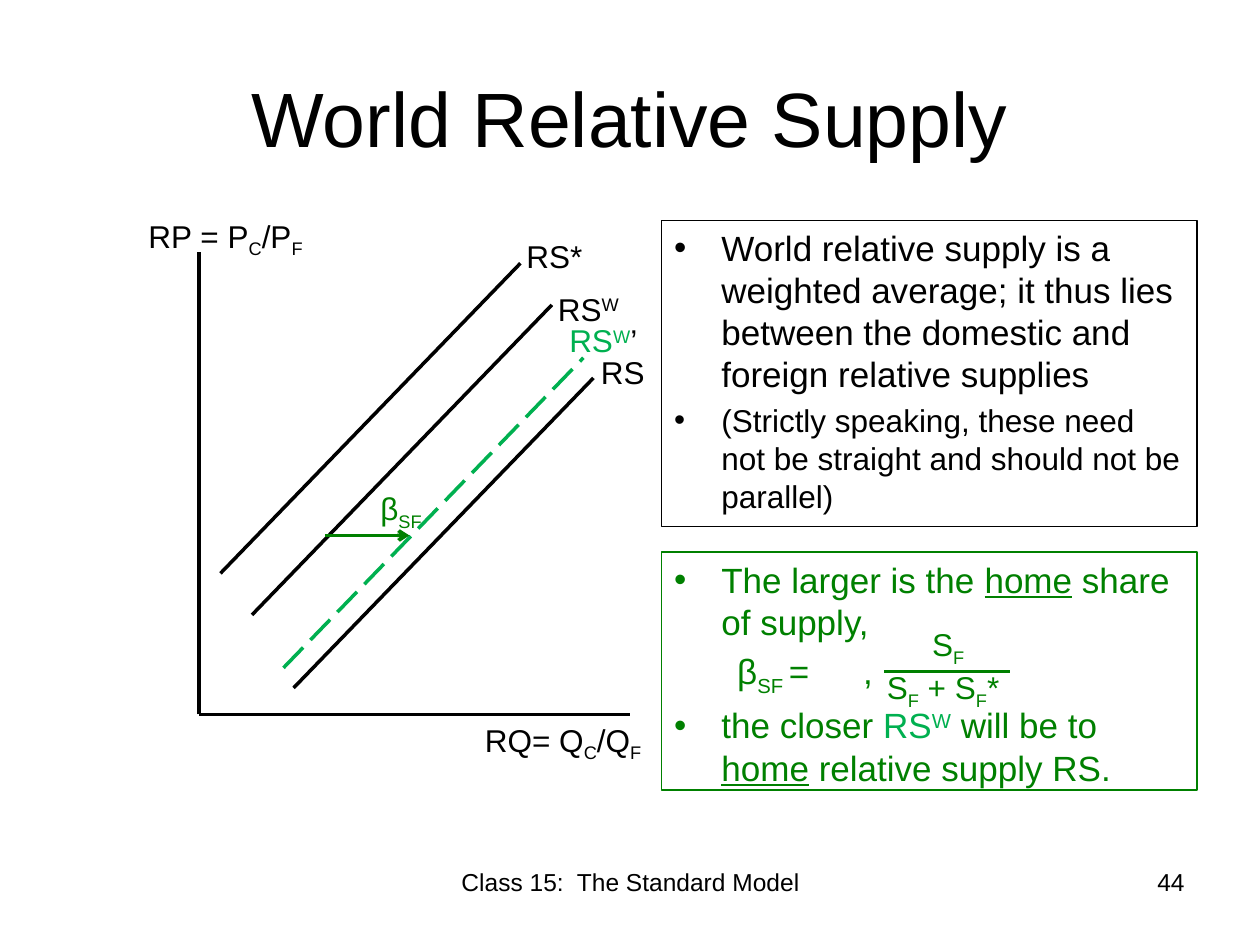
from dataclasses import dataclass
from typing import Optional

from lxml import etree
from pptx import Presentation, util as u
from pptx.dml.color import RGBColor
from pptx.enum import dml, shapes, text
from pptx.oxml import ns

BLACK, GREEN, BRIGHT = "000000", "008000", "00B050"
SUB, SUP = -25, 30
LEFT, CENTER, RIGHT = text.PP_ALIGN.LEFT, text.PP_ALIGN.CENTER, text.PP_ALIGN.RIGHT


@dataclass
class Run:
    text: str
    base: int = 0
    color: Optional[str] = None
    underline: bool = False


@dataclass
class Label:
    box: tuple
    runs: list
    color: str = BLACK
    size: int = 18
    align: text.PP_ALIGN = LEFT
    wrap: bool = True


@dataclass
class Line:
    start: tuple
    end: tuple
    color: str = BLACK
    dash: bool = False
    arrow: bool = False


@dataclass
class Item:
    runs: list
    size: int = 20
    tabs: tuple = ()


def rgb(color: str) -> RGBColor:
    return RGBColor.from_string(color)


def place(sp, box: tuple) -> None:
    sp.left, sp.top, sp.width, sp.height = (u.Inches(v) for v in box)


def fill_paragraph(p, runs: list, color: str, size: int) -> None:
    p.font.name = "Arial"
    p.font.size = u.Pt(size)
    p.font.color.rgb = rgb(color)
    for run in runs:
        r = p.add_run()
        r.text = run.text
        if run.color:
            r.font.color.rgb = rgb(run.color)
        if run.underline:
            r.font.underline = True
        if run.base:
            r._r.get_or_add_rPr().set("baseline", str(run.base * 1000))


def add_label(s, label: Label) -> None:
    sp = s.shapes.add_textbox(*(u.Inches(v) for v in label.box))
    tf = sp.text_frame
    tf.word_wrap = label.wrap
    p = tf.paragraphs[0]
    p.alignment = label.align
    fill_paragraph(p, label.runs, label.color, label.size)


def add_line(s, line: Line) -> None:
    c = s.shapes.add_connector(shapes.MSO_CONNECTOR.STRAIGHT,
                               *(u.Inches(v) for v in line.start + line.end))
    c.line.color.rgb = rgb(line.color)
    c.line.width = u.Pt(2)
    if line.dash:
        c.line.dash_style = dml.MSO_LINE.LONG_DASH
    if line.arrow:
        etree.SubElement(c.line._get_or_add_ln(), ns.qn("a:tailEnd"), type="arrow")
    etree.SubElement(c._element.spPr, ns.qn("a:effectLst"))


def set_tabs(p, tabs: tuple) -> None:
    pPr = p._p.get_or_add_pPr()
    pPr.set("marL", "0")
    pPr.set("indent", "0")
    none = etree.Element(ns.qn("a:buNone"))
    stops = etree.Element(ns.qn("a:tabLst"))
    for tab in tabs:
        etree.SubElement(stops, ns.qn("a:tab"), pos=str(u.Inches(tab)), algn="l")
    pPr.insert(0, none)
    pPr.insert(1, stops)


def fill_list(sp, box: tuple, items: list, color: str) -> None:
    place(sp, box)
    sp.line.color.rgb = rgb(color)
    sp.line.width = u.Pt(0.75)
    tf = sp.text_frame
    tf.auto_size = text.MSO_AUTO_SIZE.NONE
    for i, item in enumerate(items):
        p = tf.add_paragraph() if i else tf.paragraphs[0]
        fill_paragraph(p, item.runs, color, item.size)
        if item.tabs:
            set_tabs(p, item.tabs)


def curve(left: float, bottom: float, color: str = BLACK, dash: bool = False) -> Line:
    return Line((left, bottom), (left + 2.38, bottom - 2.46), color, dash)


ORIGIN = (1.58, 5.67)
LINES = [
    Line(ORIGIN, (5, 5.67)),
    Line(ORIGIN, (1.58, 2)),
    curve(1.75, 4.55),
    curve(2, 4.88),
    curve(2.33, 5.46),
    curve(2.25, 5.3, BRIGHT, True),
    Line((2.58, 4.25), (3.25, 4.25), GREEN, arrow=True),
    Line((7.02, 5.33), (8.02, 5.33), GREEN),
]
LABELS = [
    Label((1.08, 1.67, 1.51, 0.4), [Run("RP = P"), Run("C", SUB), Run("/P"), Run("F", SUB)]),
    Label((3.75, 5.67, 1.5, 0.4), [Run("RQ= Q"), Run("C", SUB), Run("/Q"), Run("F", SUB)]),
    Label((4.08, 1.83, 0.65, 0.4), [Run("RS*")], wrap=False),
    Label((4.33, 2.25, 0.71, 0.4), [Run("RS"), Run("W", SUP)], wrap=False),
    Label((4.42, 2.5, 0.77, 0.4), [Run("RS"), Run("W", SUP), Run("’", color=BLACK)],
          BRIGHT, wrap=False),
    Label((4.67, 2.75, 0.55, 0.4), [Run("RS")], wrap=False),
    Label((2.92, 3.83, 0.58, 0.4), [Run("β"), Run("SF", SUB)], GREEN),
    Label((6.94, 4.91, 1.17, 0.4), [Run("S"), Run("F", SUB)], GREEN, align=CENTER),
    Label((6.94, 5.25, 1.13, 0.4),
          [Run("S"), Run("F", SUB), Run(" + S"), Run("F", SUB), Run("*")], GREEN, wrap=False),
    Label((3.42, 6.83, 3.17, 0.52), [Run("Class 15:  The Standard Model")],
          size=14, align=CENTER),
    Label((7.17, 6.83, 2.33, 0.52), [Run("44")], size=14, align=RIGHT),
]
AVERAGE = [
    Item([Run("World relative supply is a weighted average; it thus lies between "
              "the domestic and foreign relative supplies")]),
    Item([Run("(Strictly speaking, these need not be straight and should not be parallel)")], 18),
]
SHARE = [
    Item([Run("The larger is the "), Run("home", underline=True), Run(" share of supply,")]),
    Item([Run("\tβ"), Run("SF ", SUB), Run("=\t,")], tabs=(1, 2.6)),
    Item([Run("the closer "), Run("RS", color=BRIGHT), Run("W", SUP, BRIGHT),
          Run(" will be to "), Run("home", underline=True), Run(" relative supply RS.")]),
]


def main() -> None:
    prs = Presentation()
    prs.slide_width, prs.slide_height = u.Inches(10), u.Inches(7.5)
    s = prs.slides.add_slide(prs.slide_layouts[3])
    title, average, share = s.placeholders
    place(title, (0.5, 0.3, 9, 1.25))
    fill_paragraph(title.text_frame.paragraphs[0], [Run("World Relative Supply")], BLACK, 44)
    fill_list(average, (5.25, 1.75, 4.25, 2.43), AVERAGE, BLACK)
    fill_list(share, (5.25, 4.38, 4.25, 1.89), SHARE, GREEN)
    for line in LINES:
        add_line(s, line)
    for label in LABELS:
        add_label(s, label)
    prs.save("out.pptx")


if __name__ == "__main__":
    main()
